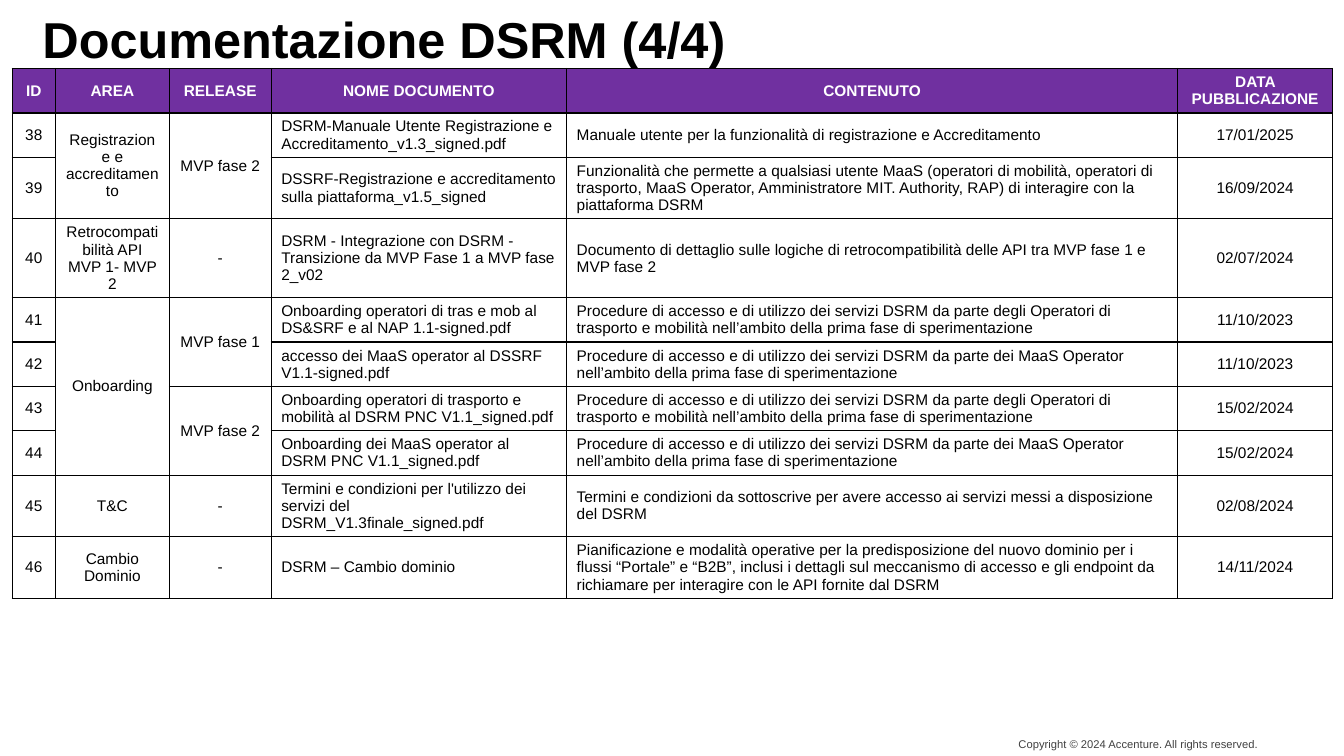
from lxml import etree
from pptx import Presentation
from pptx.dml.color import RGBColor
from pptx.enum.text import MSO_ANCHOR, MSO_AUTO_SIZE, PP_ALIGN
from pptx.oxml.ns import qn
from pptx.util import Inches, Pt

LEFT, CENTER, RIGHT = PP_ALIGN.LEFT, PP_ALIGN.CENTER, PP_ALIGN.RIGHT
MIDDLE = MSO_ANCHOR.MIDDLE
NO_AUTOFIT = MSO_AUTO_SIZE.NONE
COLORS = {"black": "000000", "white": "FFFFFF", "purple": "7030A0"}

HEADERS = ["ID", "AREA", "RELEASE", "NOME DOCUMENTO", "CONTENUTO", "DATA PUBBLICAZIONE"]
COLUMN_WIDTHS = [0.43, 1.13, 1.01, 2.93, 6.06, 1.54]
ROW_HEIGHTS = [0.44, 0.44, 0.61, 0.78, 0.44, 0.44, 0.44, 0.44, 0.61, 0.61]
ALIGNMENTS = [CENTER, CENTER, CENTER, LEFT, LEFT, CENTER]
FIRST_ID = 38

OPERATORI = ("Procedure di accesso e di utilizzo dei servizi DSRM da parte degli Operatori di "
             "trasporto e mobilità nell’ambito della prima fase di sperimentazione ")
MAAS = ("Procedure di accesso e di utilizzo dei servizi DSRM da parte dei MaaS Operator "
        "nell’ambito della prima fase di sperimentazione ")

# Area, release, document, content, date; an empty text continues the cell above
DOCUMENTS = [
    ("Registrazione e accreditamento", "MVP fase 2 ",
     "DSRM-Manuale Utente Registrazione e Accreditamento_v1.3_signed.pdf",
     "Manuale utente per la funzionalità di registrazione e Accreditamento", "17/01/2025"),
    ("", "", "DSSRF-Registrazione e accreditamento sulla piattaforma_v1.5_signed",
     "Funzionalità che permette a qualsiasi utente MaaS (operatori di mobilità, operatori di "
     "trasporto, MaaS Operator, Amministratore MIT. Authority, RAP) di interagire con la "
     "piattaforma DSRM", "16/09/2024"),
    ("Retrocompatibilità API MVP 1- MVP 2", "-",
     "DSRM - Integrazione con DSRM - Transizione da MVP Fase 1 a MVP fase 2_v02",
     "Documento di dettaglio sulle logiche di retrocompatibilità delle API tra MVP fase 1 e "
     "MVP fase 2", "02/07/2024"),
    ("Onboarding", "MVP fase 1",
     "Onboarding operatori di tras e mob al DS&SRF e al NAP 1.1-signed.pdf",
     OPERATORI, "11/10/2023"),
    ("", "", "accesso dei MaaS operator al DSSRF V1.1-signed.pdf", MAAS, "11/10/2023"),
    ("", "MVP fase 2 ",
     "Onboarding operatori di trasporto e mobilità al DSRM PNC V1.1_signed.pdf",
     OPERATORI, "15/02/2024"),
    ("", "", "Onboarding dei MaaS operator al DSRM PNC V1.1_signed.pdf", MAAS, "15/02/2024"),
    ("T&C", "-", "Termini e condizioni per l'utilizzo dei servizi del DSRM_V1.3finale_signed.pdf",
     "Termini e condizioni da sottoscrive per avere accesso ai servizi messi a disposizione "
     "del DSRM", "02/08/2024"),
    ("Cambio Dominio", "-", "DSRM – Cambio dominio",
     "Pianificazione e modalità operative per la predisposizione del nuovo dominio per i "
     "flussi “Portale” e “B2B”, inclusi i dettagli sul meccanismo di accesso e gli endpoint da "
     "richiamare per interagire con le API fornite dal DSRM", "14/11/2024"),
]


def write_text(frame, text, size=11, color="black", bold=False, align=LEFT):
    para = frame.paragraphs[0]
    para.alignment = align
    span = para.add_run()
    span.text = text
    span.font.name = "Arial"
    span.font.size = Pt(size)
    span.font.bold = bold
    span.font.color.rgb = RGBColor.from_string(COLORS[color])
    return span


def add_borders(cell):
    properties = cell._tc.get_or_add_tcPr()
    for side in ("lnL", "lnR", "lnT", "lnB"):
        line = etree.SubElement(properties, qn(f"a:{side}"), w=str(Pt(1)))
        fill = etree.SubElement(line, qn("a:solidFill"))
        etree.SubElement(fill, qn("a:srgbClr"), val=COLORS["black"])


deck = Presentation()
deck.slide_width, deck.slide_height = Inches(13.33), Inches(7.5)
page = deck.slides.add_slide(deck.slide_layouts[5])

# Title
title = page.shapes.title
title.left, title.top = Inches(0.42), Inches(0.05)
title.width, title.height = Inches(12.5), Inches(0.73)

# Copyright line
footer = page.shapes.add_textbox(Inches(9.68), Inches(7.27), Inches(2.8), Inches(0.22))

for box in (title, footer):
    frame = box.text_frame
    frame.word_wrap = True
    frame.auto_size = NO_AUTOFIT
    frame.vertical_anchor = MIDDLE
    frame.margin_left = frame.margin_right = frame.margin_top = frame.margin_bottom = 0
    frame.paragraphs[0].space_after = Pt(12)

write_text(title.text_frame, "Documentazione DSRM (4/4)", size=36, bold=True)
title.text_frame.paragraphs[0].line_spacing = 0.9
notice = write_text(footer.text_frame, "Copyright © 2024 Accenture. All rights reserved.",
                    size=8, align=RIGHT)
notice_color = notice.font._element.find(".//" + qn("a:srgbClr"))
etree.SubElement(notice_color, qn("a:alpha"), val="75000")

# Document table
rows = [HEADERS] + [(str(FIRST_ID + i), *document) for i, document in enumerate(DOCUMENTS)]
table = page.shapes.add_table(len(rows), len(HEADERS), Inches(0.12), Inches(0.68),
                              Inches(sum(COLUMN_WIDTHS)), Inches(sum(ROW_HEIGHTS))).table
table.horz_banding = False
for column, width in zip(table.columns, COLUMN_WIDTHS):
    column.width = Inches(width)
for row, height in zip(table.rows, ROW_HEIGHTS):
    row.height = Inches(height)

for r, texts in enumerate(rows):
    is_header = r == 0
    for c, text in enumerate(texts):
        cell = table.cell(r, c)
        add_borders(cell)
        cell.fill.solid()
        cell.fill.fore_color.rgb = RGBColor.from_string(COLORS["purple" if is_header else "white"])
        cell.vertical_anchor = MIDDLE
        if text:
            write_text(cell.text_frame, text, color="white" if is_header else "black",
                       bold=is_header, align=CENTER if is_header else ALIGNMENTS[c])

# Merge each area and release with the empty cells below it
for c in (1, 2):
    starts = [r for r, texts in enumerate(rows) if texts[c]]
    for start, following in zip(starts, starts[1:] + [len(rows)]):
        if following - start > 1:
            table.cell(start, c).merge(table.cell(following - 1, c))

deck.save("out.pptx")
